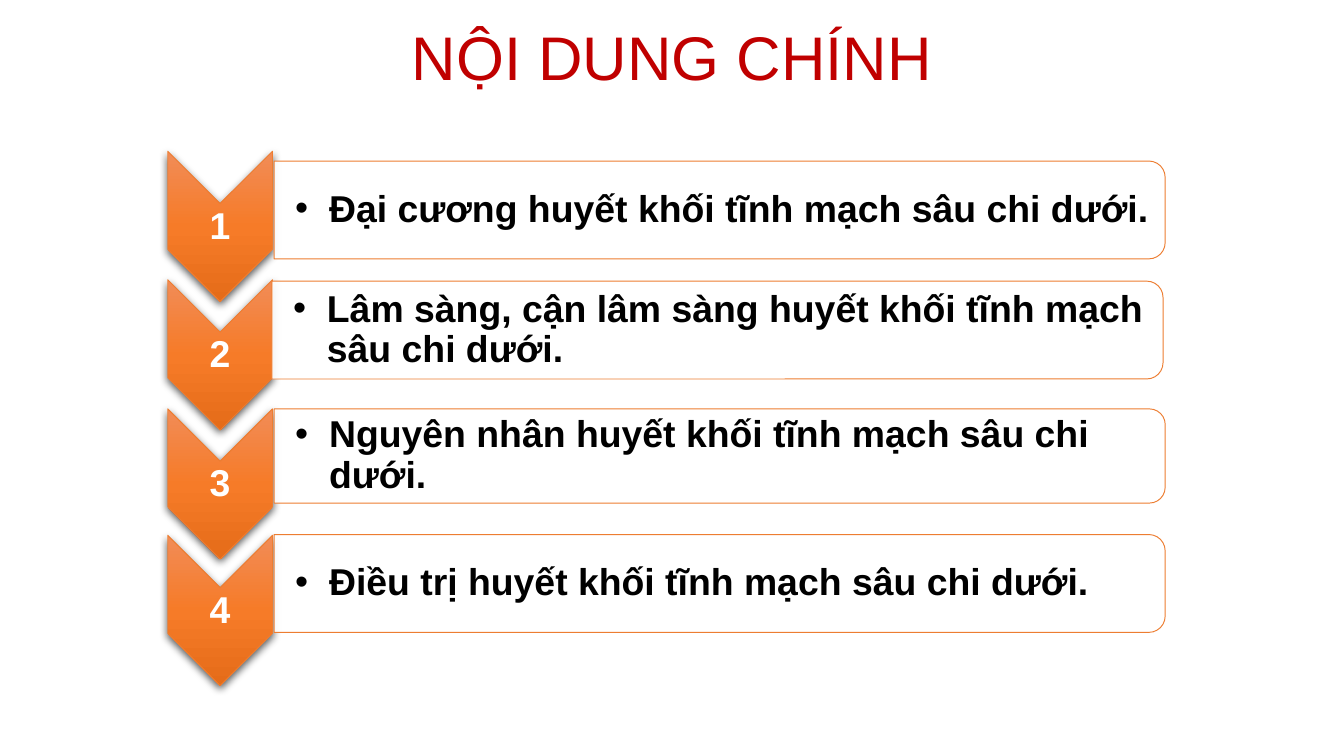
"""Build the main-contents slide: a title and four numbered chevrons with bars."""
from dataclasses import dataclass

from lxml.etree import SubElement
from pptx import Presentation
from pptx.dml.color import RGBColor
from pptx.enum.shapes import MSO_SHAPE
from pptx.enum.text import MSO_ANCHOR, PP_ALIGN
from pptx.oxml import parse_xml
from pptx.oxml.ns import nsdecls, qn
from pptx.util import Cm, Pt

COLORS = {
    "title": "C00000", "line": "ED7D31", "bar": "FFFFFF", "number": "FFFFFF",
    "text": "000000", "shadow": "000000",
    "top": "F18C57", "middle": "F67B28", "bottom": "E56C19",
}
FONT = "Arial"
CHEVRON_X, CHEVRON_LENGTH, CHEVRON_WIDTH = 4.16, 2.84, 1.98
BAR_LENGTH, TEXT_WIDTH = 16.84, 16.76


@dataclass
class Item:
    text: str
    chevron_y: float
    bar_y: float
    bar_x: float = 13.6
    bar_height: float = 1.85


ITEMS = [
    Item("Đại cương huyết khối tĩnh mạch sâu chi dưới.", 4.28, 3.97),
    Item("Lâm sàng, cận lâm sàng huyết khối tĩnh mạch sâu chi dưới.", 6.71, 6.24, bar_x=13.56),
    Item("Nguyên nhân huyết khối tĩnh mạch sâu chi dưới.", 9.15, 8.62, bar_height=1.78),
    Item("Điều trị huyết khối tĩnh mạch sâu chi dưới.", 11.54, 11.03),
]


def add_text(shapes, text: str, x: float, y: float, w: float, h: float, *,
             color: str, size: float = 20, bold: bool = True, align=PP_ALIGN.LEFT,
             anchor=MSO_ANCHOR.MIDDLE, inset: float = 0.03, left: float = 0.03,
             bullet: bool = False) -> None:
    sp = shapes.add_textbox(Cm(x), Cm(y), Cm(w), Cm(h))
    tf = sp.text_frame
    tf.word_wrap = True
    tf.vertical_anchor = anchor
    tf.margin_left = Cm(left)
    tf.margin_top = tf.margin_right = tf.margin_bottom = Cm(inset)
    p = tf.paragraphs[0]
    p.alignment = align
    p.line_spacing = 0.9
    if bullet:
        p.level = 1
        pPr = p._p.get_or_add_pPr()
        pPr.set("marL", str(Cm(0.64)))
        pPr.set("indent", str(-Cm(0.64)))
        SubElement(pPr, qn("a:buFont"), typeface=FONT)
        SubElement(pPr, qn("a:buChar"), char="•")
    r = p.add_run()
    r.text = text
    r.font.name = FONT
    r.font.size = Pt(size)
    r.font.bold = bold
    r.font.color.rgb = RGBColor.from_string(COLORS[color])


def add_turned(shapes, kind: MSO_SHAPE, cx: float, cy: float, w: float, h: float):
    sp = shapes.add_shape(kind, Cm(cx - w / 2), Cm(cy - h / 2), Cm(w), Cm(h))
    sp.rotation = 90
    sp.shadow.inherit = False
    sp.fill.solid()
    sp.fill.fore_color.rgb = RGBColor.from_string(COLORS["bar"])
    sp.line.color.rgb = RGBColor.from_string(COLORS["line"])
    sp.line.width = Pt(0.5)
    return sp


def add_chevron(shapes, cx: float, cy: float) -> None:
    sp = add_turned(shapes, MSO_SHAPE.CHEVRON, cx, cy, CHEVRON_LENGTH, CHEVRON_WIDTH)
    spPr = sp._element.spPr
    stops = "".join(
        f'<a:gs pos="{pos}"><a:srgbClr val="{COLORS[name]}"/></a:gs>'
        for pos, name in ((0, "top"), (50000, "middle"), (100000, "bottom")))
    grad = parse_xml(
        f'<a:gradFill {nsdecls("a")} rotWithShape="0"><a:gsLst>{stops}</a:gsLst>'
        '<a:lin ang="5400000" scaled="0"/></a:gradFill>')
    spPr.replace(spPr.find(qn("a:solidFill")), grad)
    shadow = parse_xml(
        f'<a:outerShdw {nsdecls("a")} blurRad="{Pt(4.5)}" dist="{Pt(1.5)}" dir="5400000" '
        f'algn="ctr" rotWithShape="0"><a:srgbClr val="{COLORS["shadow"]}">'
        '<a:alpha val="63000"/></a:srgbClr></a:outerShdw>')
    spPr.find(qn("a:effectLst")).append(shadow)


def add_bar(shapes, item: Item) -> None:
    sp = add_turned(shapes, MSO_SHAPE.ROUND_2_SAME_RECTANGLE, item.bar_x, item.bar_y,
                    item.bar_height, BAR_LENGTH)
    clr = sp._element.spPr.find(qn("a:solidFill")).find(qn("a:srgbClr"))
    SubElement(clr, qn("a:alpha"), val="90000")


def add_item(shapes, number: int, item: Item) -> None:
    add_chevron(shapes, CHEVRON_X, item.chevron_y)
    add_text(shapes, str(number), CHEVRON_X - CHEVRON_WIDTH / 2, item.chevron_y - 0.42,
             CHEVRON_WIDTH, 0.86, color="number", align=PP_ALIGN.CENTER)
    add_bar(shapes, item)
    height = item.bar_height - 0.18
    add_text(shapes, item.text, item.bar_x - BAR_LENGTH / 2, item.bar_y - height / 2,
             TEXT_WIDTH, height, color="text", left=0.4, bullet=True)


def main() -> None:
    prs = Presentation()
    prs.slide_width, prs.slide_height = Cm(25.4), Cm(14.29)
    s = prs.slides.add_slide(prs.slide_layouts[6])
    group = s.shapes.add_group_shape()
    for number, item in enumerate(ITEMS, 1):
        add_item(group.shapes, number, item)
    add_text(s.shapes, "NỘI DUNG CHÍNH", 1.27, 0.38, 22.86, 2.39, color="title", size=33,
             bold=False, align=PP_ALIGN.CENTER, anchor=MSO_ANCHOR.TOP, inset=0.13, left=0.13)
    prs.save("out.pptx")


if __name__ == "__main__":
    main()
